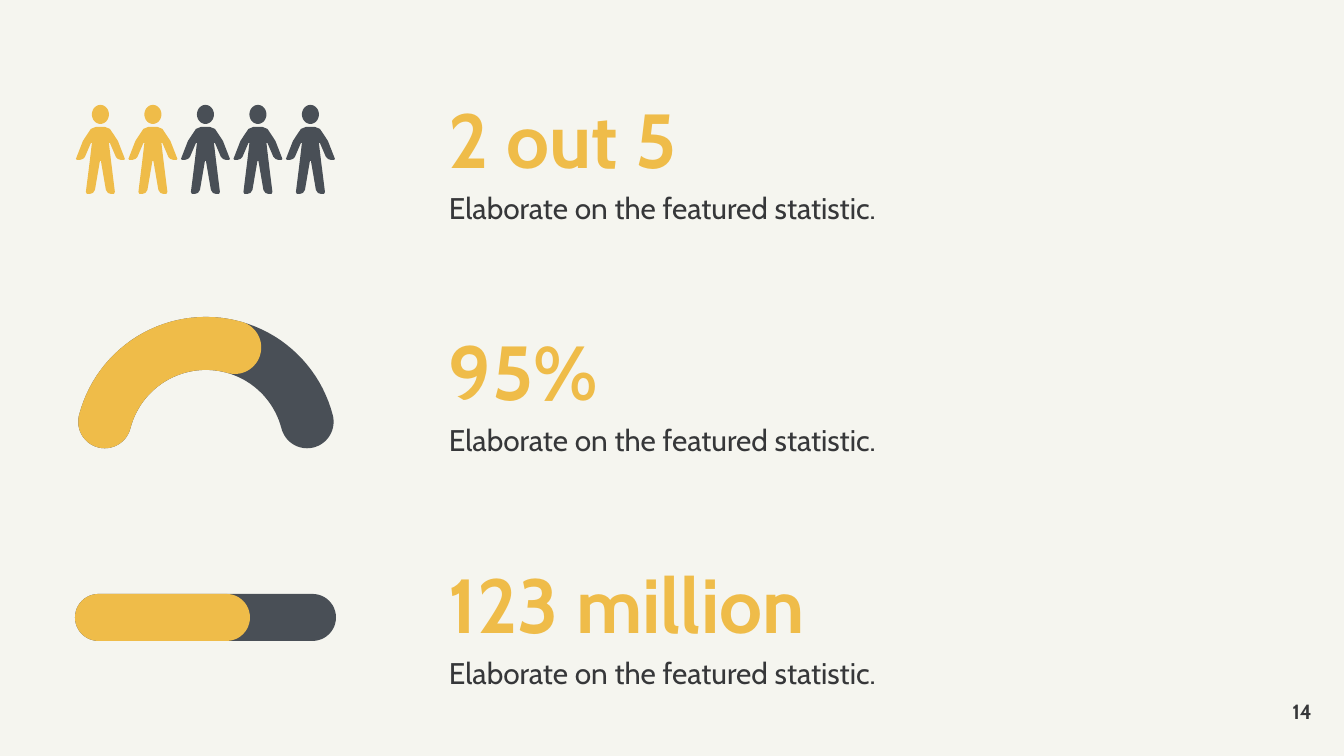
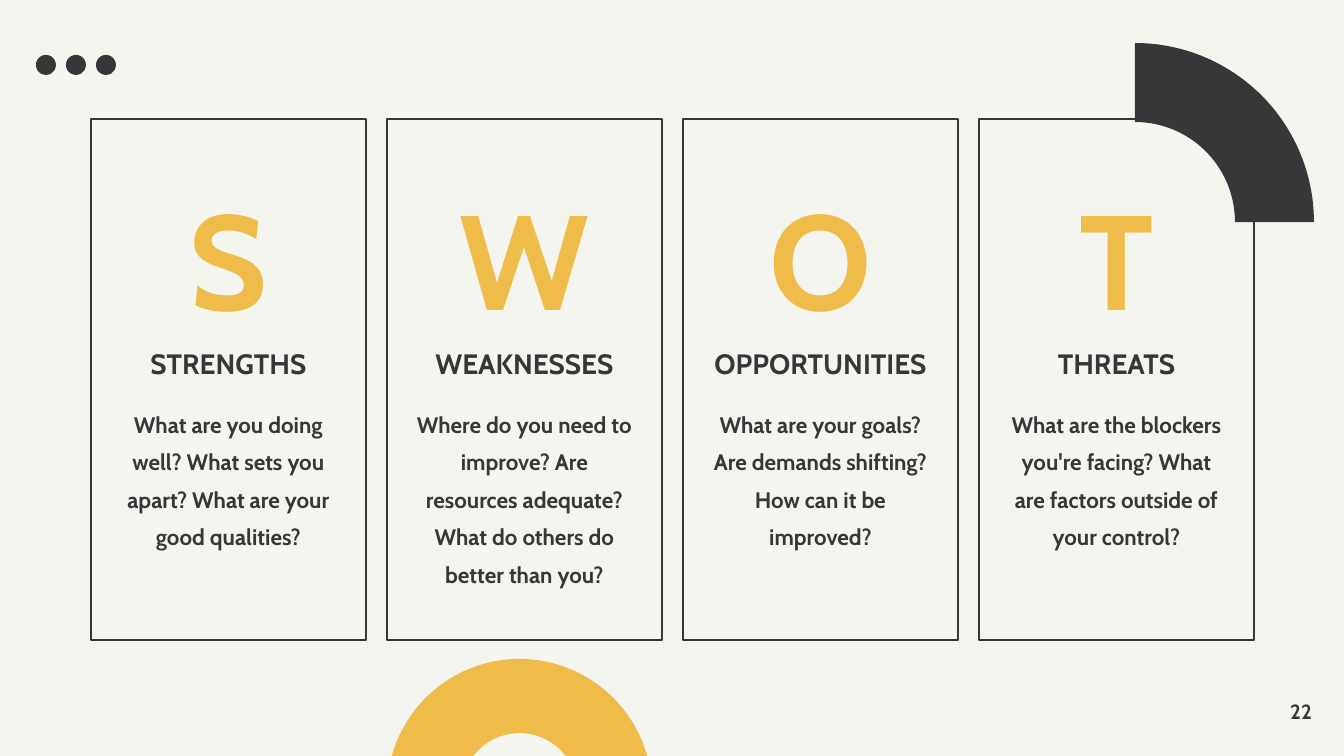
from math import cos, radians, sin

from pptx import Presentation
from pptx import util as u
from pptx.dml.color import RGBColor
from pptx.enum import shapes, text

PX = 914400 / 134.4
WIDE, HIGH = 1344, 756
FONT = "Cabin"
INK = {"paper": "F5F5EF", "gold": "EFBC49", "slate": "494F56", "dark": "363739"}
KIND = shapes.MSO_SHAPE
ALIGN = text.PP_ALIGN

STYLE = {
    "stat": {"size": 41, "bold": True, "ink": "gold", "lead": 1.2},
    "note": {"size": 16, "lead": 1.4},
    "letter": {"size": 72, "bold": True, "ink": "gold", "lead": 1.25, "align": ALIGN.CENTER},
    "label": {"size": 15, "bold": True, "lead": 1.2, "align": ALIGN.CENTER},
    "body": {"size": 12, "bold": True, "lead": 1.4, "align": ALIGN.CENTER},
    "page": {"size": 11, "bold": True, "align": ALIGN.RIGHT,
             "anchor": text.MSO_ANCHOR.MIDDLE, "fit": text.MSO_AUTO_SIZE.NONE},
}

STATS = ["2 out 5", "95%", "123 million"]
NOTE = "Elaborate on the featured statistic."
SWOT = [
    ("STRENGTHS", "What are you doing well? What sets you apart? "
                  "What are your good qualities?"),
    ("WEAKNESSES", "Where do you need to improve? Are resources adequate? "
                   "What do others do better than you?"),
    ("OPPORTUNITIES", "What are your goals? Are demands shifting? "
                      "How can it be improved?"),
    ("THREATS", "What are the blockers you're facing? "
                "What are factors outside of your control?"),
]

# Left half of a figure's body, from the neck round to the crotch.
FIGURE = 49
HALF = [(20, 22), (15, 24), (11, 30), (7, 36), (0, 54), (1, 55), (4, 55),
        (7, 54), (9, 52), (15, 38), (16, 38), (14, 55), (10, 87), (11, 89),
        (14, 89), (17, 88), (19, 85), (24, 56)]


def emu(*vals):
    return [u.Emu(round(v * PX)) for v in vals]


def rgb(ink):
    return RGBColor.from_string(INK[ink])


def paint(shape, ink):
    shape.shadow.inherit = False
    shape.fill.solid()
    shape.fill.fore_color.rgb = rgb(ink)
    shape.line.fill.background()
    return shape


def solid(slide, kind, box, ink, adj=None):
    shape = paint(slide.shapes.add_shape(kind, *emu(*box)), ink)
    if adj is not None:
        shape.adjustments[0] = adj
    return shape


def outline(slide, loops, ink):
    """Draw closed loops of points as one filled shape."""
    loops = [[emu(*dot) for dot in loop] for loop in loops]
    pen = slide.shapes.build_freeform(*loops[0][0], scale=1.0)
    for i, loop in enumerate(loops):
        if i:
            pen.move_to(*loop[0])
        pen.add_line_segments(loop[1:], close=True)
    return paint(pen.convert_to_shape(), ink)


def arc(x, y, r, start, end, steps=48):
    """Points on a circle; degrees run anticlockwise from the right."""
    turns = [radians(start + (end - start) * i / steps) for i in range(steps + 1)]
    return [(x + r * cos(t), y - r * sin(t)) for t in turns]


def write(slide, box, words, name):
    look = {"bold": False, "ink": "dark", "lead": 1.0, "align": ALIGN.LEFT,
            "anchor": text.MSO_ANCHOR.TOP,
            "fit": text.MSO_AUTO_SIZE.SHAPE_TO_FIT_TEXT, **STYLE[name]}
    frame = slide.shapes.add_textbox(*emu(*box)).text_frame
    para = frame.paragraphs[0]
    run = para.add_run()
    run.text = words
    rules = [
        (frame, {"word_wrap": True, "auto_size": look["fit"],
                 "vertical_anchor": look["anchor"], "margin_left": 0,
                 "margin_right": 0, "margin_top": 0, "margin_bottom": 0}),
        (para, {"alignment": look["align"], "line_spacing": look["lead"]}),
        (run.font, {"name": FONT, "size": u.Pt(look["size"]), "bold": look["bold"]}),
    ]
    for item, values in rules:
        for key, value in values.items():
            setattr(item, key, value)
    run.font.color.rgb = rgb(look["ink"])


def add_page(deck, number):
    slide = deck.slides.add_slide(deck.slide_layouts[6])
    write(slide, (1231, 698, 81, 27), number, "page")
    return slide


def person(x, y):
    """Head and body loops of one figure."""
    head = [(x + FIGURE / 2 + 8.5 * cos(t), y + 9.5 - 9.5 * sin(t))
            for t in (radians(a) for a in range(0, 360, 10))]
    body = HALF + [(FIGURE - px, py) for px, py in reversed(HALF)]
    return [head, [(x + px, y + py) for px, py in body]]


def people(slide, x, y, w, count, lit):
    step = (w - FIGURE) / (count - 1)
    for part, ink in ((range(lit), "gold"), (range(lit, count), "slate")):
        loops = [loop for i in part for loop in person(x + i * step, y)]
        outline(slide, loops, ink)


def gauge(slide, x, y, big, small):
    """Half ring with round ends, centred on x, y."""
    mid, cap, tilt = (big + small) / 2, (big - small) / 2, 14.5
    start = 180 - tilt
    for end, ink in ((tilt, "slate"), (74, "gold")):
        (ax, ay), (bx, by) = arc(x, y, mid, start, end, 1)
        loop = (arc(x, y, big, start, end) + arc(bx, by, cap, end, end - 180)
                + arc(x, y, small, end, start)
                + arc(ax, ay, cap, start + 180, start))
        outline(slide, [loop], ink)


def bar(slide, x, y, w, h, done):
    for size, ink in ((w, "slate"), (done, "gold")):
        solid(slide, KIND.ROUNDED_RECTANGLE, (x, y, size, h), ink, 0.5)


def stat(slide, x, y, w, words):
    write(slide, (x, y, w, 93), words, "stat")
    write(slide, (x, y + 101, w, 36), NOTE, "note")


def stats_slide(deck):
    slide = add_page(deck, "14")
    for i, words in enumerate(STATS):
        stat(slide, 449, 74 + i * 465 // 2, 668, words)
    gauge(slide, 206, 448, 131, 78)
    bar(slide, 75, 594, 261, 47, 175)
    people(slide, 76, 105, 259, 5, 2)


def card(slide, x, y, w, h, label, body):
    edge = solid(slide, KIND.RECTANGLE, (x, y, w, h), "paper")
    edge.fill.background()
    edge.line.color.rgb = rgb("dark")
    edge.line.width = u.Pt(0.9)
    left, wide = x + (w - 218) / 2, 218
    for words, name, top, high in ((label[0], "letter", 17, 163),
                                   (label, "label", 221, 34),
                                   (body, "body", 281, 141)):
        write(slide, (left, y + top, wide, high), words, name)


def dots(slide, x, y, size, step):
    for i in range(3):
        solid(slide, KIND.OVAL, (x + i * step, y, size, size), "dark")


def swot_slide(deck):
    slide = add_page(deck, "22")
    solid(slide, KIND.DONUT, (387, 659, 265, 265), "gold", 0.28)
    for i, (label, body) in enumerate(SWOT):
        card(slide, 91 + i * 296, 119, 275, 521, label, body)
    corner = arc(1135, 222, 179, 90, 0) + arc(1135, 222, 100, 0, 90)
    outline(slide, [corner], "dark")
    dots(slide, 36, 55, 20, 30)


def main():
    deck = Presentation()
    deck.slide_width, deck.slide_height = emu(WIDE, HIGH)
    fill = deck.slide_master.background.fill
    fill.solid()
    fill.fore_color.rgb = rgb("paper")
    stats_slide(deck)
    swot_slide(deck)
    deck.save("out.pptx")


if __name__ == "__main__":
    main()
